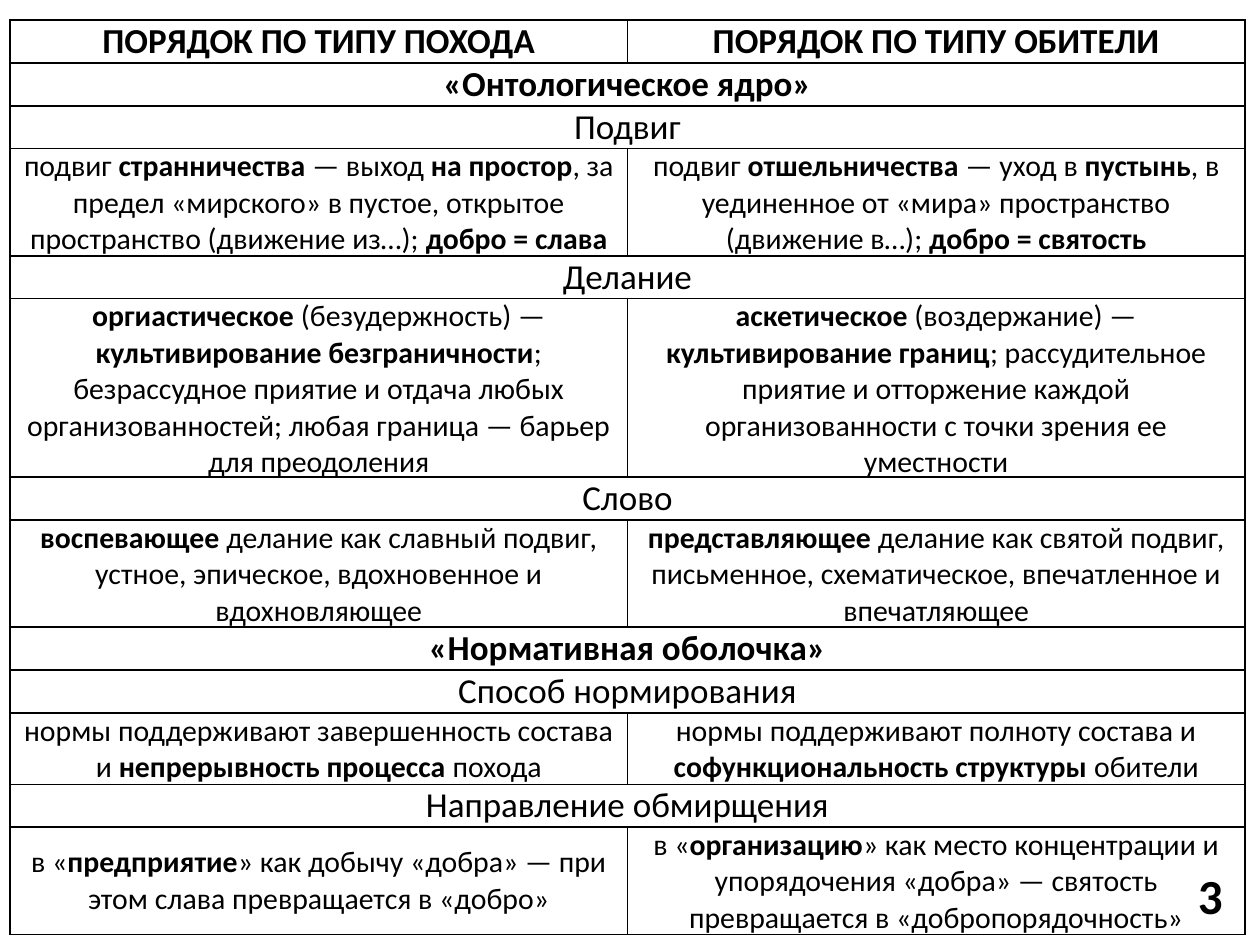
from dataclasses import dataclass

import pptx
import pptx.dml.color
import pptx.enum.text
import pptx.oxml
import pptx.oxml.ns
import pptx.util
from pptx.util import Inches

COLORS = {"ink": "000000"}
FONT = "Calibri"
HEAD_SIZE, BODY_SIZE = 20, 17


@dataclass
class Row:
    """One text spans the table, two fill the columns; ** encloses bold."""
    height: float
    texts: tuple[str, ...]
    size: int = HEAD_SIZE


ROWS = [
    Row(0.34, ("**ПОРЯДОК ПО ТИПУ ПОХОДА**", "**ПОРЯДОК ПО ТИПУ ОБИТЕЛИ**")),
    Row(0.34, ("**«Онтологическое ядро»**",)),
    Row(0.34, ("Подвиг",)),
    Row(0.81, (
        "подвиг **странничества** — выход **на простор**, за предел «мирского» "
        "в пустое, открытое пространство (движение из…); **добро = слава**",
        "подвиг **отшельничества** — уход в **пустынь**, в уединенное от «мира» "
        "пространство (движение в…); **добро = святость**"), BODY_SIZE),
    Row(0.34, ("Делание",)),
    Row(1.36, (
        "**оргиастическое** (безудержность) — **культивирование безграничности**; "
        "безрассудное приятие и отдача любых организованностей; "
        "любая граница — барьер для преодоления",
        "**аскетическое** (воздержание) — **культивирование границ**; "
        "рассудительное приятие и отторжение каждой организованности "
        "с точки зрения ее уместности"), BODY_SIZE),
    Row(0.34, ("Слово",)),
    Row(0.81, (
        "**воспевающее** делание как славный подвиг, устное, эпическое, "
        "вдохновенное и вдохновляющее",
        "**представляющее** делание как святой подвиг, письменное, "
        "схематическое, впечатленное и впечатляющее"), BODY_SIZE),
    Row(0.34, ("**«Нормативная оболочка»**",)),
    Row(0.34, ("Способ нормирования",)),
    Row(0.54, (
        "нормы поддерживают завершенность состава и "
        "**непрерывность процесса** похода",
        "нормы поддерживают полноту состава и "
        "**софункциональность структуры** обители"), BODY_SIZE),
    Row(0.34, ("Направление обмирщения",)),
    Row(0.81, (
        "в «**предприятие**» как добычу «добра» — при этом слава "
        "превращается в «добро»",
        "в «**организацию**» как место концентрации и упорядочения «добра» — "
        "святость превращается в «добропорядочность»"), BODY_SIZE),
]


def write_text(tf, text: str, *, size: float, space_after: float = 0) -> None:
    """Fill a text frame with one centred paragraph; ** toggles bold."""
    p = tf.paragraphs[0]
    p.alignment = pptx.enum.text.PP_ALIGN.CENTER
    p.space_after = pptx.util.Pt(space_after)
    for i, part in enumerate(text.split("**")):
        if part:
            r = p.add_run()
            r.text = part
            r.font.name = FONT
            r.font.size = pptx.util.Pt(size)
            r.font.bold = i % 2 == 1
            r.font.color.rgb = pptx.dml.color.RGBColor.from_string(COLORS["ink"])


def format_cell(cell, line_width: float = 1) -> None:
    """Set narrow margins, a border on every side and no fill."""
    cell.margin_left = cell.margin_right = Inches(0.04)
    cell.margin_top = cell.margin_bottom = 0
    cell.vertical_anchor = pptx.enum.text.MSO_ANCHOR.MIDDLE
    tc_pr = cell._tc.get_or_add_tcPr()
    for side in ("lnL", "lnR", "lnT", "lnB"):
        tc_pr.append(pptx.oxml.parse_xml(
            f'<a:{side} {pptx.oxml.ns.nsdecls("a")} w="{pptx.util.Pt(line_width)}">'
            f'<a:solidFill><a:srgbClr val="{COLORS["ink"]}"/></a:solidFill>'
            f'</a:{side}>'))
    cell.fill.background()


def add_page_number(s, number: str) -> None:
    side = 0.79
    sp = s.shapes.add_textbox(Inches(10 - side), Inches(7.5 - side),
                              Inches(side), Inches(side))
    tf = sp.text_frame
    tf.word_wrap = True
    tf.vertical_anchor = pptx.enum.text.MSO_ANCHOR.MIDDLE
    write_text(tf, f"**{number}**", size=28)


def add_comparison(s, rows: list[Row]) -> None:
    height = sum(row.height for row in rows)
    table = s.shapes.add_table(len(rows), 2, Inches(0.08), Inches(0.16),
                               Inches(9.8), Inches(height)).table
    table.first_row = table.horz_banding = False
    for i, row in enumerate(rows):
        table.rows[i].height = Inches(row.height)
        for j in range(2):
            format_cell(table.cell(i, j))
        if len(row.texts) == 1:
            table.cell(i, 0).merge(table.cell(i, 1))
        for j, text in enumerate(row.texts):
            write_text(table.cell(i, j).text_frame, text,
                       size=row.size, space_after=3)


def main() -> None:
    prs = pptx.Presentation()
    prs.slide_width, prs.slide_height = Inches(10), Inches(7.5)
    s = prs.slides.add_slide(prs.slide_layouts[6])
    add_page_number(s, "3")
    add_comparison(s, ROWS)
    prs.save("out.pptx")


if __name__ == "__main__":
    main()
